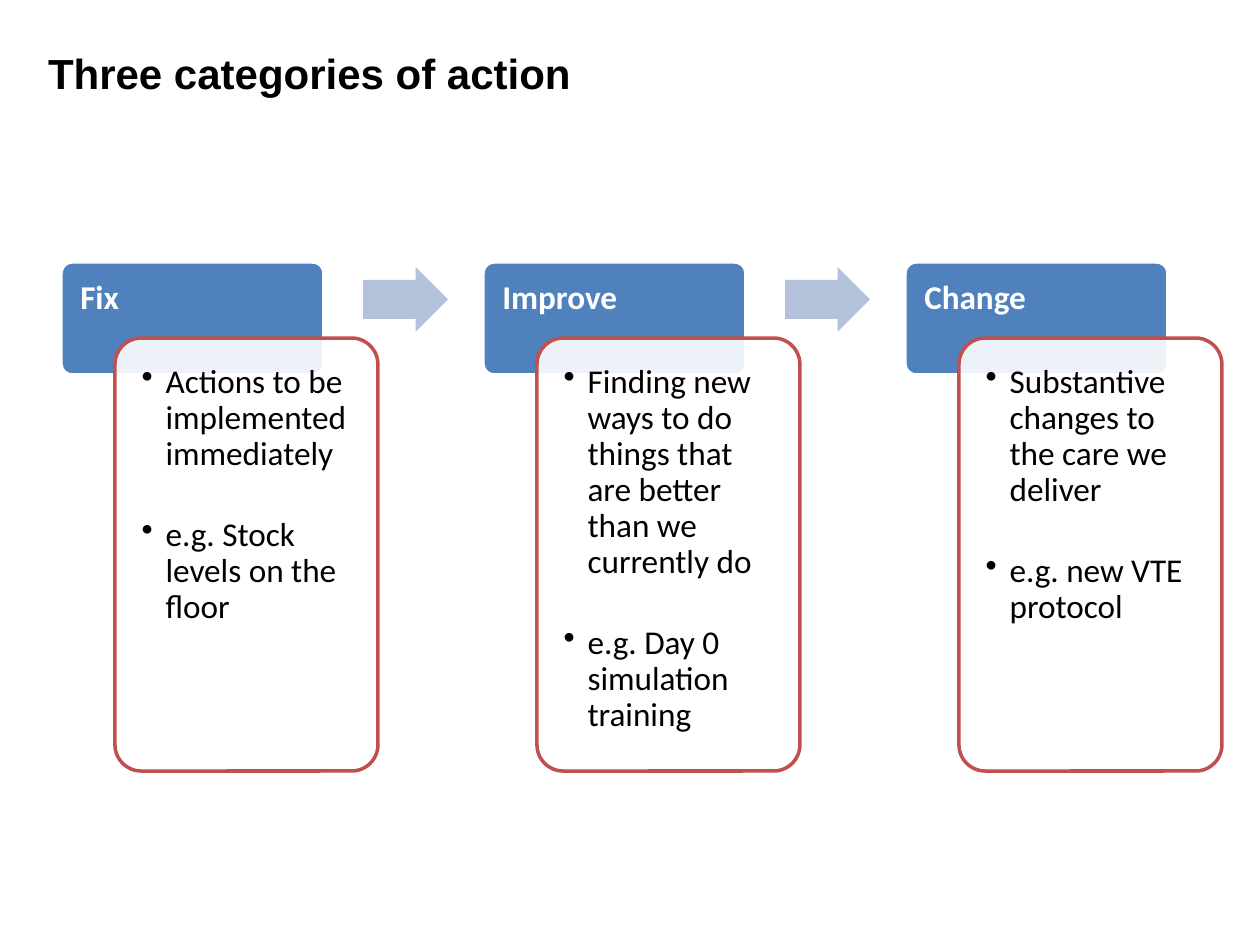
from lxml.etree import SubElement
from pptx import Presentation
from pptx.dml.color import RGBColor
from pptx.enum.shapes import MSO_SHAPE as Shape
from pptx.enum.text import MSO_ANCHOR as Anchor, PP_ALIGN as Align
from pptx.oxml.ns import qn
from pptx.util import Pt

PX = 914400 / 126
COLORS = {
    "black": "000000",
    "white": "FFFFFF",
    "header": "4F81BD",
    "border": "C0504D",
    "arrow": "B3C1DB",
}
PITCH = 422
CATEGORIES = [
    ("Fix", ["Actions to be implemented immediately",
             "e.g. Stock levels on the floor"]),
    ("Improve", ["Finding new ways to do things that are better than we currently do",
                 "e.g. Day 0 simulation training"]),
    ("Change", ["Substantive changes to the care we deliver",
                "e.g. new VTE protocol"]),
]


def px(*lengths):
    return [round(length * PX) for length in lengths]


def write(box, lines, size=19, font="Calibri", color="black", bold=False,
          margin=0, spacing=0.9, gap=0, bullet=False):
    frame = box.text_frame
    frame.word_wrap = True
    frame.vertical_anchor = Anchor.TOP
    inset, indent = px(margin, 24)
    frame.margin_left = frame.margin_top = inset
    frame.margin_right = frame.margin_bottom = inset
    for index, line in enumerate(lines):
        para = frame.paragraphs[0] if index == 0 else frame.add_paragraph()
        para.alignment = Align.LEFT
        para.line_spacing = spacing
        if index:
            para.space_before = Pt(gap)
        if bullet:
            props = para._p.get_or_add_pPr()
            props.set("marL", str(indent))
            props.set("indent", str(-indent))
            SubElement(props, qn("a:buChar"), char="•")
        span = para.add_run()
        span.text = line
        span.font.size = Pt(size)
        span.font.name = font
        span.font.bold = bold
        span.font.color.rgb = RGBColor.from_string(COLORS[color])


deck = Presentation()
deck.slide_width, deck.slide_height = px(1260, 945)
page = deck.slides.add_slide(deck.slide_layouts[6])

title = page.shapes.add_textbox(*px(48, 48, 1052, 50))
write(title, ["Three categories of action"], size=24, font="Arial", bold=True, spacing=1)

for column, (name, actions) in enumerate(CATEGORIES):
    left = 61 + column * PITCH
    parts = [
        (Shape.ROUNDED_RECTANGLE, (left, 262, 263, 113), [0.1], "header", "white"),
        (Shape.ROUNDED_RECTANGLE, (left + 54, 338, 263, 433), [0.1], "white", "border"),
    ]
    if column < len(CATEGORIES) - 1:
        parts.append((Shape.RIGHT_ARROW, (left + 302, 267, 85, 65), [0.6, 0.5], "arrow", None))

    boxes = []
    for kind, place, adjustments, fill, line in parts:
        box = page.shapes.add_shape(kind, *px(*place))
        box.shadow.inherit = False
        for index, value in enumerate(adjustments):
            box.adjustments[index] = value
        box.fill.solid()
        box.fill.fore_color.rgb = RGBColor.from_string(COLORS[fill])
        if line:
            box.line.color.rgb = RGBColor.from_string(COLORS[line])
            box.line.width = Pt(2)
        else:
            box.line.fill.background()
        boxes.append(box)

    header, body = boxes[:2]
    tint = body.fill._xPr.find(qn("a:solidFill"))[0]
    SubElement(tint, qn("a:alpha"), val="90000")
    write(header, [name], color="white", bold=True, margin=16)
    write(body, actions, margin=19, gap=26, bullet=True)

deck.save("out.pptx")
